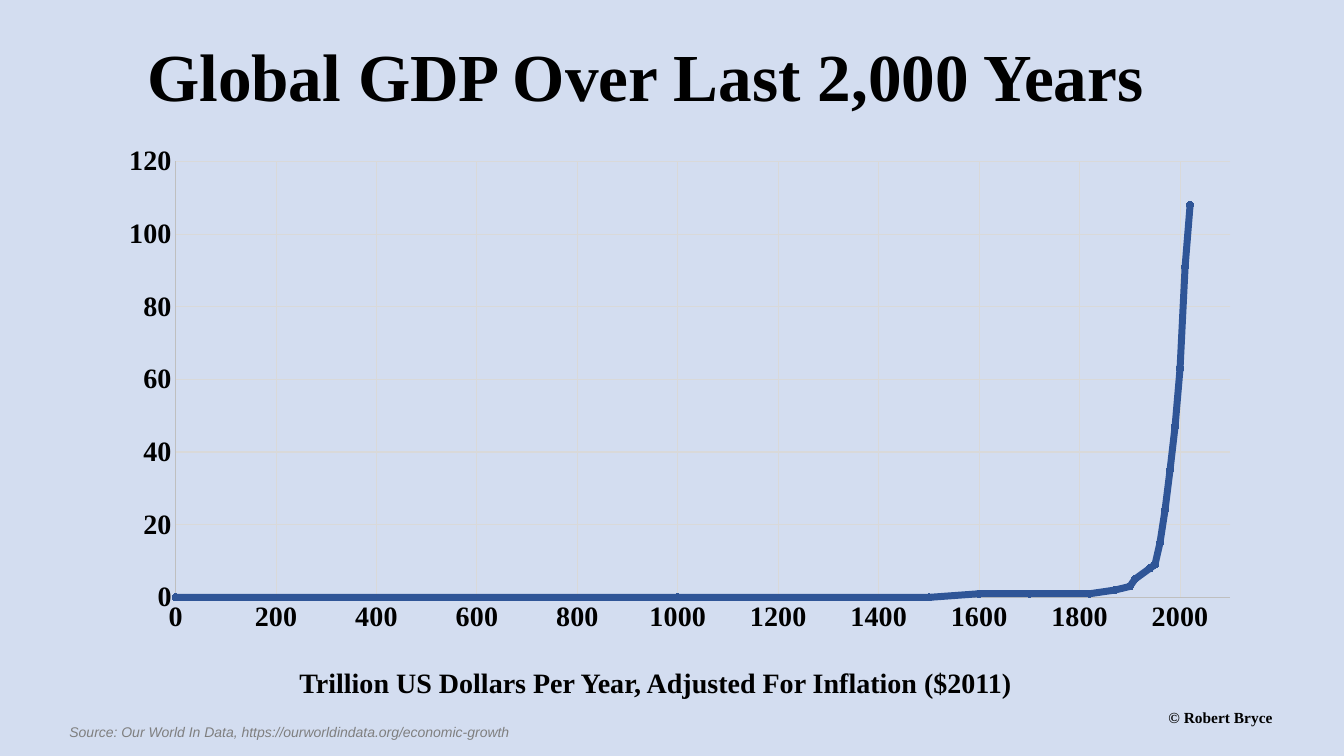
from lxml import etree
from pptx import Presentation
from pptx import util as u
from pptx.chart.data import XyChartData
from pptx.dml.color import RGBColor
from pptx.enum import chart as ch, text as t
from pptx.oxml import parse_xml
from pptx.oxml.ns import nsdecls, qn

GDP = [
    (0, 0), (1000, 0), (1500, 0), (1600, 1), (1700, 1), (1820, 1),
    (1870, 2), (1900, 3), (1910, 5), (1940, 8), (1950, 9), (1960, 15),
    (1970, 24), (1980, 35), (1990, 47), (2000, 63), (2010, 91), (2020, 108),
]


def color(code):
    return RGBColor.from_string(code)


class Page:
    face, ink, back = "Times New Roman", "000000", "D3DDF0"
    blue, dot, rule, grid = "2F5597", "4472C4", "BFBFBF", "D9D9D9"

    def __init__(self, deck):
        self.deck = deck
        self.slide = deck.slides.add_slide(deck.slide_layouts[5])
        fill = self.slide.background.fill
        fill.solid()
        fill.fore_color.rgb = color(self.back)

    def box(self, *place):
        """Turn percentages of the slide into lengths."""
        sides = (self.deck.slide_width, self.deck.slide_height) * 2
        return [int(n * side / 100) for n, side in zip(place, sides)]

    def style(self, font, size, ink=None, face=None, bold=True):
        font.size, font.bold = u.Pt(size), bold
        font.name = face or self.face
        font.color.rgb = color(ink or self.ink)

    def put(self, shape, words, size, wrap=True, anchor=t.MSO_ANCHOR.TOP,
            **look):
        frame = shape.text_frame
        frame.text = words
        frame.word_wrap = wrap
        frame.auto_size = t.MSO_AUTO_SIZE.NONE
        frame.vertical_anchor = anchor
        para = frame.paragraphs[0]
        para.alignment = t.PP_ALIGN.LEFT
        para.line_spacing = 1.0
        self.style(para.runs[0].font, size, **look)
        return para.runs[0].font

    def title(self, words, place, size):
        shape = self.slide.shapes.title
        shape.left, shape.top, shape.width, shape.height = self.box(*place)
        self.put(shape, words, size, False, t.MSO_ANCHOR.BOTTOM)

    def label(self, words, place, size, **look):
        shape = self.slide.shapes.add_textbox(*self.box(*place))
        return self.put(shape, words, size, **look)

    def line(self, form, ink, width):
        form.line.color.rgb = color(ink)
        form.line.width = u.Pt(width)

    def axis(self, axis, low, high, step):
        axis.minimum_scale, axis.maximum_scale = low, high
        axis.major_unit = step
        axis.major_tick_mark = axis.minor_tick_mark = ch.XL_TICK_MARK.NONE
        axis.has_major_gridlines = True
        self.line(axis.major_gridlines.format, self.grid, 0.75)
        self.line(axis.format, self.rule, 0.75)
        self.style(axis.tick_labels.font, 20)

    def curve(self, place, pairs):
        data = XyChartData()
        row = data.add_series("Series 1")
        for year, value in pairs:
            row.add_data_point(year, value)
        chart = self.slide.shapes.add_chart(
            ch.XL_CHART_TYPE.XY_SCATTER_SMOOTH, *self.box(*place), data).chart
        chart.has_legend = chart.has_title = False
        self.style(chart.font, 10, face="Calibri", bold=False)
        self.axis(chart.category_axis, 0, 2100, 200)
        self.axis(chart.value_axis, 0, 120, 20)
        plot = chart.plots[0]
        plot.vary_by_categories = False
        series = plot.series[0]
        series.smooth = True
        self.line(series.format, self.blue, 5)
        mark = series.marker
        mark.style, mark.size = ch.XL_MARKER_STYLE.CIRCLE, 5
        mark.format.fill.solid()
        mark.format.fill.fore_color.rgb = color(self.dot)
        self.line(mark.format, self.dot, 0.75)
        self.inset(chart, x=0.06, y=0.05, w=0.92, h=0.86)

    def inset(self, chart, **share):
        """Fix the plot area inside the chart frame."""
        area = chart.element.find(".//" + qn("c:plotArea"))
        for old in area.findall(qn("c:layout")):
            area.remove(old)
        layout = parse_xml(f"<c:layout {nsdecls('c')}/>")
        manual = etree.SubElement(layout, qn("c:manualLayout"))
        parts = {"layoutTarget": "inner", "xMode": "edge", "yMode": "edge"}
        for tag, val in {**parts, **share}.items():
            etree.SubElement(manual, qn("c:" + tag)).set("val", str(val))
        area.insert(0, layout)


def main():
    deck = Presentation()
    deck.slide_width, deck.slide_height = u.Inches(13.33), u.Inches(7.5)
    page = Page(deck)

    # Heading
    page.title("Global GDP Over Last 2,000 Years", (10.2, 3.73, 76.44, 12.13), 48)

    # Growth curve and its caption
    page.curve((7.95, 18, 85.3, 67.07), GDP)
    page.label("Trillion US Dollars Per Year, Adjusted For Inflation ($2011)",
               (21.53, 87.33, 55.44, 5.87), 20, wrap=False)

    # Credits
    font = page.label(
        "Source: Our World In Data, https://ourworldindata.org/economic-growth",
        (4.43, 95.07, 51.09, 3.2), 10, ink="7F7F7F", face="Arial", bold=False)
    font.italic = True
    page.label("© Robert Bryce", (86.2, 93.07, 10.35, 3.2), 11)

    deck.save("out.pptx")


if __name__ == "__main__":
    main()
